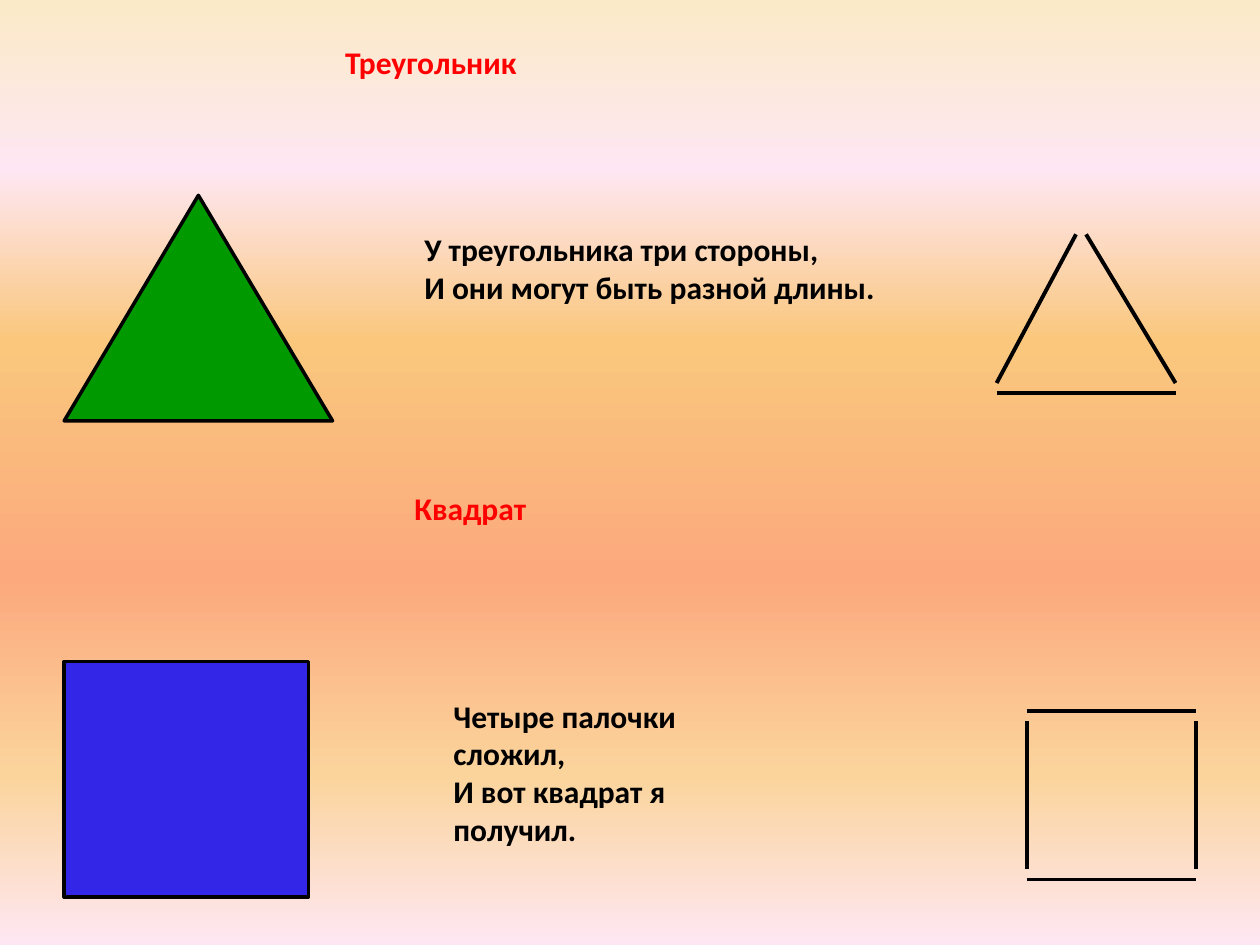
from dataclasses import dataclass

from lxml import etree
from pptx import Presentation
from pptx import util as u
from pptx.dml.color import RGBColor
from pptx.enum import shapes, text
from pptx.oxml.ns import qn
from pptx.slide import Slide


@dataclass(frozen=True)
class Theme:
    font: str = "Calibri"
    size: float = 18
    title: str = "FF0000"
    ink: str = "000000"
    triangle: str = "009900"
    square: str = "3426E6"
    outline: float = 2
    stick: float = 2.25
    background: tuple = (
        (0, "FBEAC7"), (18, "FEE7F2"), (36, "FAC77D"),
        (61, "FBA97D"), (82, "FBD49C"), (100, "FEE7F2"),
    )


THEME = Theme()


@dataclass(frozen=True)
class Box:
    left: float
    top: float
    width: float
    height: float

    def lengths(self) -> list:
        return [u.Inches(n) for n in (self.left, self.top, self.width, self.height)]


@dataclass(frozen=True)
class Figure:
    kind: shapes.MSO_SHAPE
    box: Box
    color: str


@dataclass(frozen=True)
class Caption:
    lines: tuple
    box: Box
    color: str


@dataclass(frozen=True)
class Stick:
    x1: float
    y1: float
    x2: float
    y2: float


FIGURES = (
    Figure(shapes.MSO_SHAPE.ISOSCELES_TRIANGLE, Box(0.51, 1.55, 2.13, 1.79), THEME.triangle),
    Figure(shapes.MSO_SHAPE.RECTANGLE, Box(0.51, 5.25, 1.94, 1.87), THEME.square),
)

CAPTIONS = (
    Caption(("Треугольник",), Box(2.64, 0.29, 5.12, 0.94), THEME.title),
    Caption(("Квадрат",), Box(3.19, 3.83, 3.39, 0.96), THEME.title),
    Caption(("У треугольника три стороны,", "И они могут быть разной длины."),
            Box(3.27, 1.78, 4.09, 0.71), THEME.ink),
    Caption(("Четыре палочки сложил,", "И вот квадрат я получил."),
            Box(3.5, 5.48, 2.91, 0.71), THEME.ink),
)

GAP = 0.08


def triangle_sticks(left: float, right: float, top: float, foot: float) -> list[Stick]:
    """Two slanted sides parted at the apex, above a separate base."""
    base = foot + GAP
    return [
        Stick(right, foot, 8.62, top),
        Stick(left, foot, 8.62 - GAP, top),
        Stick(left, base, right, base),
    ]


def square_sticks(left: float, right: float, top: float, bottom: float) -> list[Stick]:
    """Four sides, the upright ones stopping short of the level ones."""
    upright = [Stick(x, bottom - GAP, x, top + GAP) for x in (left, right)]
    level = [Stick(left, y, right, y) for y in (top, bottom)]
    return upright + level


def paint_background(slide: Slide) -> None:
    fill = slide.background.fill
    fill.gradient()
    fill.gradient_angle = 270
    stops = slide.element.find(".//" + qn("a:gsLst"))
    for stop in list(stops):
        stops.remove(stop)
    for percent, color in THEME.background:
        stop = etree.SubElement(stops, qn("a:gs"), pos=str(percent * 1000))
        etree.SubElement(stop, qn("a:srgbClr"), val=color)


def draw_figure(slide: Slide, figure: Figure) -> None:
    shape = slide.shapes.add_shape(figure.kind, *figure.box.lengths())
    shape.shadow.inherit = False
    shape.fill.solid()
    shape.fill.fore_color.rgb = RGBColor.from_string(figure.color)
    shape.line.color.rgb = RGBColor.from_string(THEME.ink)
    shape.line.width = u.Pt(THEME.outline)


def draw_caption(slide: Slide, caption: Caption) -> None:
    frame = slide.shapes.add_textbox(*caption.box.lengths()).text_frame
    frame.word_wrap = True
    frame.vertical_anchor = text.MSO_ANCHOR.TOP
    font_format = {"name": THEME.font, "size": u.Pt(THEME.size), "bold": True}
    for index, line in enumerate(caption.lines):
        paragraph = frame.add_paragraph() if index else frame.paragraphs[0]
        run = paragraph.add_run()
        run.text = line
        for name, value in font_format.items():
            setattr(run.font, name, value)
        run.font.color.rgb = RGBColor.from_string(caption.color)


def draw_stick(slide: Slide, stick: Stick) -> None:
    ends = [u.Inches(n) for n in (stick.x1, stick.y1, stick.x2, stick.y2)]
    connector = slide.shapes.add_connector(shapes.MSO_CONNECTOR.STRAIGHT, *ends)
    connector.line.color.rgb = RGBColor.from_string(THEME.ink)
    connector.line.width = u.Pt(THEME.stick)
    etree.SubElement(connector.element.spPr, qn("a:effectLst"))


def main() -> None:
    presentation = Presentation()
    presentation.slide_width = u.Inches(10)
    presentation.slide_height = u.Inches(7.5)
    slide = presentation.slides.add_slide(presentation.slide_layouts[6])
    paint_background(slide)
    for figure in FIGURES:
        draw_figure(slide, figure)
    sticks = triangle_sticks(7.91, 9.33, 1.86, 3.04) + square_sticks(8.15, 9.49, 5.64, 6.98)
    for stick in sticks:
        draw_stick(slide, stick)
    for caption in CAPTIONS:
        draw_caption(slide, caption)
    presentation.save("out.pptx")


if __name__ == "__main__":
    main()
